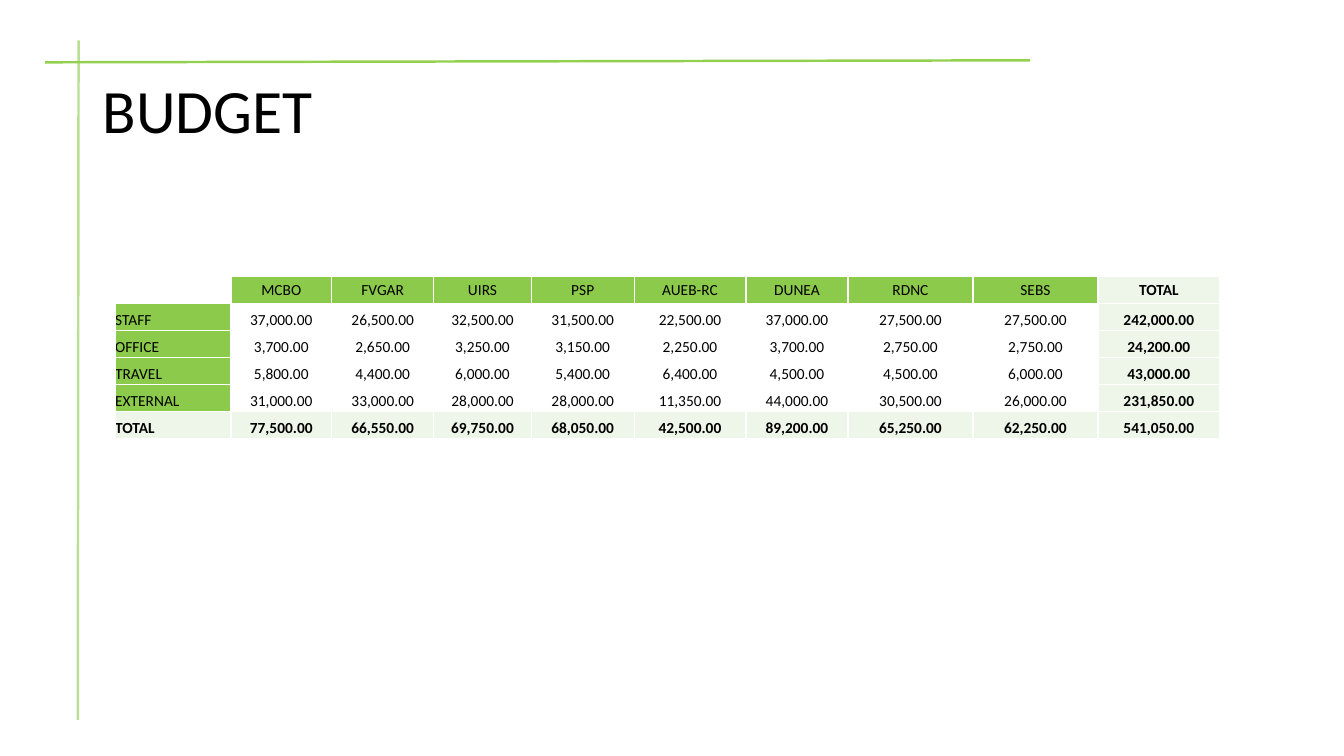
from dataclasses import dataclass

from lxml import etree
from pptx import Presentation
from pptx.dml.color import RGBColor
from pptx.enum.shapes import MSO_CONNECTOR
from pptx.enum.text import MSO_ANCHOR, PP_ALIGN
from pptx.oxml import parse_xml
from pptx.oxml.ns import nsdecls, qn
from pptx.util import Cm, Pt

STRAIGHT = MSO_CONNECTOR.STRAIGHT
MIDDLE, BOTTOM = MSO_ANCHOR.MIDDLE, MSO_ANCHOR.BOTTOM
LEFT, CENTER = PP_ALIGN.LEFT, PP_ALIGN.CENTER

TITLE = "BUDGET"
PARTNERS = ["MCBO", "FVGAR", "UIRS", "PSP", "AUEB-RC", "DUNEA", "RDNC", "SEBS"]
COSTS = {
    "STAFF": [37000, 26500, 32500, 31500, 22500, 37000, 27500, 27500],
    "OFFICE": [3700, 2650, 3250, 3150, 2250, 3700, 2750, 2750],
    "TRAVEL": [5800, 4400, 6000, 5400, 6400, 4500, 4500, 6000],
    "EXTERNAL": [31000, 33000, 28000, 28000, 11350, 44000, 30500, 26000],
}
COLUMN_CM = [2.92, 2.54, 2.57, 2.46, 2.59, 2.82, 2.57, 3.15, 3.15, 3.07]
ROW_CM = 0.68


@dataclass(frozen=True)
class Theme:
    font: str = "Calibri"
    title_size: int = 44
    table_size: int = 11
    rule_width: float = 1.75
    text: str = "000000"
    border: str = "FFFFFF"
    heading: str = "8BCA4B"
    total: str = "EEF6E9"
    vertical_rule: str = "B9DF93"
    horizontal_rule: str = "92D050"


THEME = Theme()
RULES_CM = [
    (1.98, 1.02, 1.96, 18.14, THEME.vertical_rule),
    (1.14, 1.57, 25.96, 1.52, THEME.horizontal_rule),
]


def style_run(r, size, bold=False):
    r.font.name = THEME.font
    r.font.size = Pt(size)
    r.font.bold = bold
    r.font.color.rgb = RGBColor.from_string(THEME.text)


def add_rule(s, x1, y1, x2, y2, color):
    rule = s.shapes.add_connector(STRAIGHT, Cm(x1), Cm(y1), Cm(x2), Cm(y2))
    rule.line.color.rgb = RGBColor.from_string(color)
    rule.line.width = Pt(THEME.rule_width)
    etree.SubElement(rule._element.spPr, qn("a:effectLst"))


def add_title(s):
    sp = s.shapes.title
    sp.left, sp.top, sp.width, sp.height = Cm(2.34), Cm(1.02), Cm(29.21), Cm(3.68)
    tf = sp.text_frame
    tf.text = TITLE
    tf.vertical_anchor = MIDDLE
    p = tf.paragraphs[0]
    p.alignment = LEFT
    p.line_spacing = 0.9
    style_run(p.runs[0], THEME.title_size)


def budget_rows():
    """Return the table's texts, with totals by cost type and by partner."""
    amounts = {**COSTS, "TOTAL": [sum(column) for column in zip(*COSTS.values())]}
    rows = [["", *PARTNERS, "TOTAL"]]
    for label, values in amounts.items():
        rows.append([label] + [f"{v:,.2f}" for v in [*values, sum(values)]])
    return rows


def set_borders(cell):
    tc_pr = cell._tc.get_or_add_tcPr()
    for i, side in enumerate(("lnL", "lnR", "lnT", "lnB")):
        tc_pr.insert(i, parse_xml(
            f'<a:{side} {nsdecls("a")} w="{Pt(1)}"><a:solidFill>'
            f'<a:srgbClr val="{THEME.border}"/></a:solidFill></a:{side}>'))


def fill_cell(cell, text, fill, bold, alignment, anchor):
    cell.margin_left = cell.margin_right = cell.margin_top = cell.margin_bottom = 0
    cell.vertical_anchor = anchor
    if fill:
        cell.fill.solid()
        cell.fill.fore_color.rgb = RGBColor.from_string(fill)
    else:
        cell.fill.background()
    set_borders(cell)
    cell.text_frame.text = text
    p = cell.text_frame.paragraphs[0]
    p.alignment = alignment
    for r in p.runs:
        style_run(r, THEME.table_size, bold)
    if not text:
        etree.SubElement(p._p, qn("a:endParaRPr"), sz=str(THEME.table_size * 100))


def add_budget_table(s):
    rows = budget_rows()
    last_row, last_col = len(rows) - 1, len(COLUMN_CM) - 1
    table = s.shapes.add_table(
        len(rows), len(COLUMN_CM), Cm(2.9), Cm(6.96),
        Cm(sum(COLUMN_CM)), Cm(ROW_CM * len(rows))).table
    table.first_row = table.horz_banding = False
    for column, width in zip(table.columns, COLUMN_CM):
        column.width = Cm(width)
    for i, row in enumerate(rows):
        table.rows[i].height = Cm(ROW_CM)
        for j, text in enumerate(row):
            is_total = i == last_row or j == last_col
            is_heading = (i == 0) != (j == 0)
            fill = THEME.total if is_total else THEME.heading if is_heading else None
            fill_cell(table.cell(i, j), text, fill, is_total,
                      CENTER if j else LEFT, BOTTOM if i else MIDDLE)


def main():
    prs = Presentation()
    prs.slide_width, prs.slide_height = Cm(33.87), Cm(19.05)
    s = prs.slides.add_slide(prs.slide_layouts[5])
    for rule in RULES_CM:
        add_rule(s, *rule)
    add_title(s)
    add_budget_table(s)
    prs.save("out.pptx")


if __name__ == "__main__":
    main()
